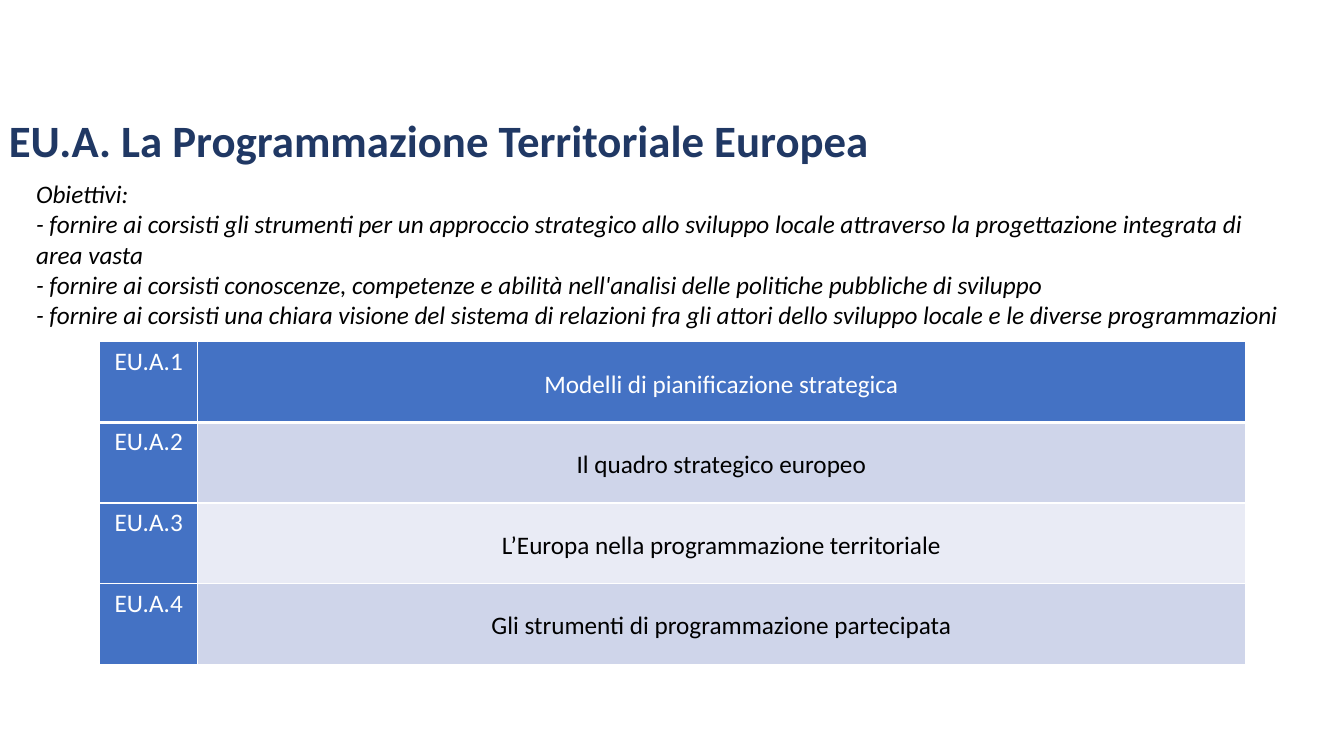
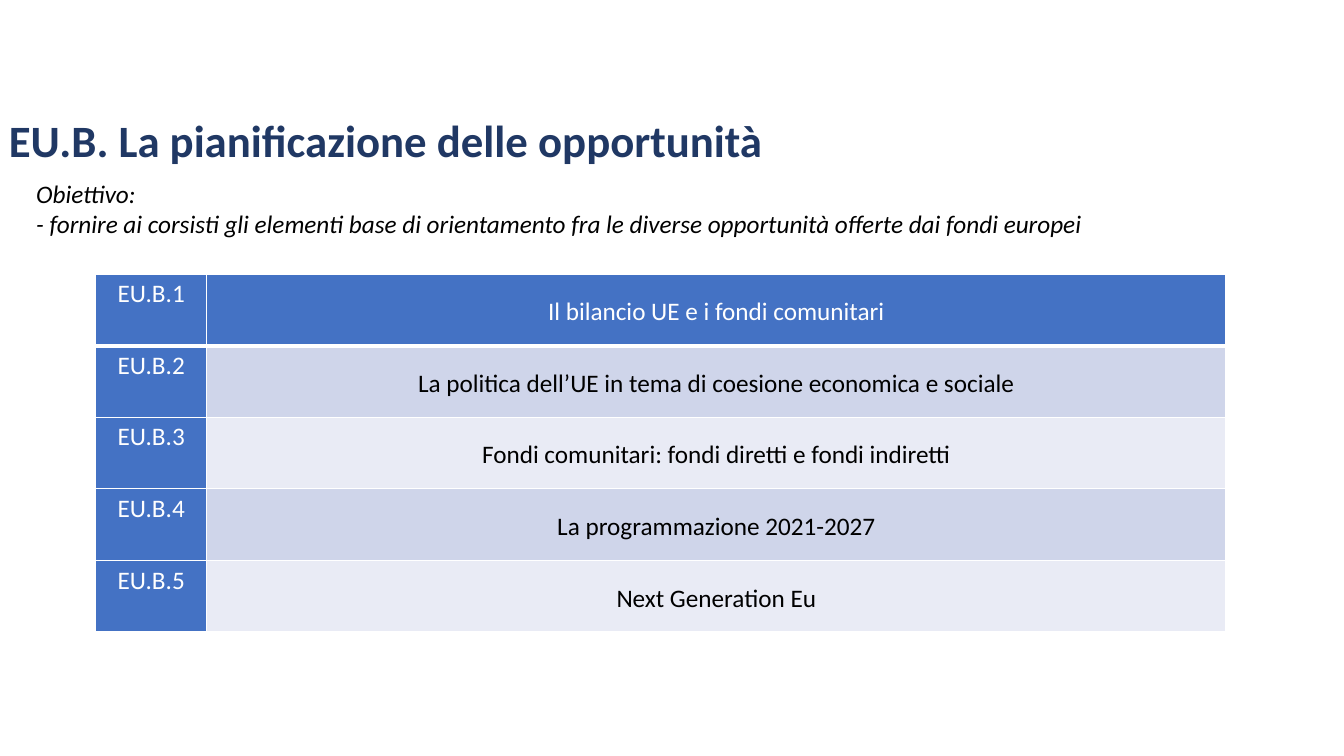
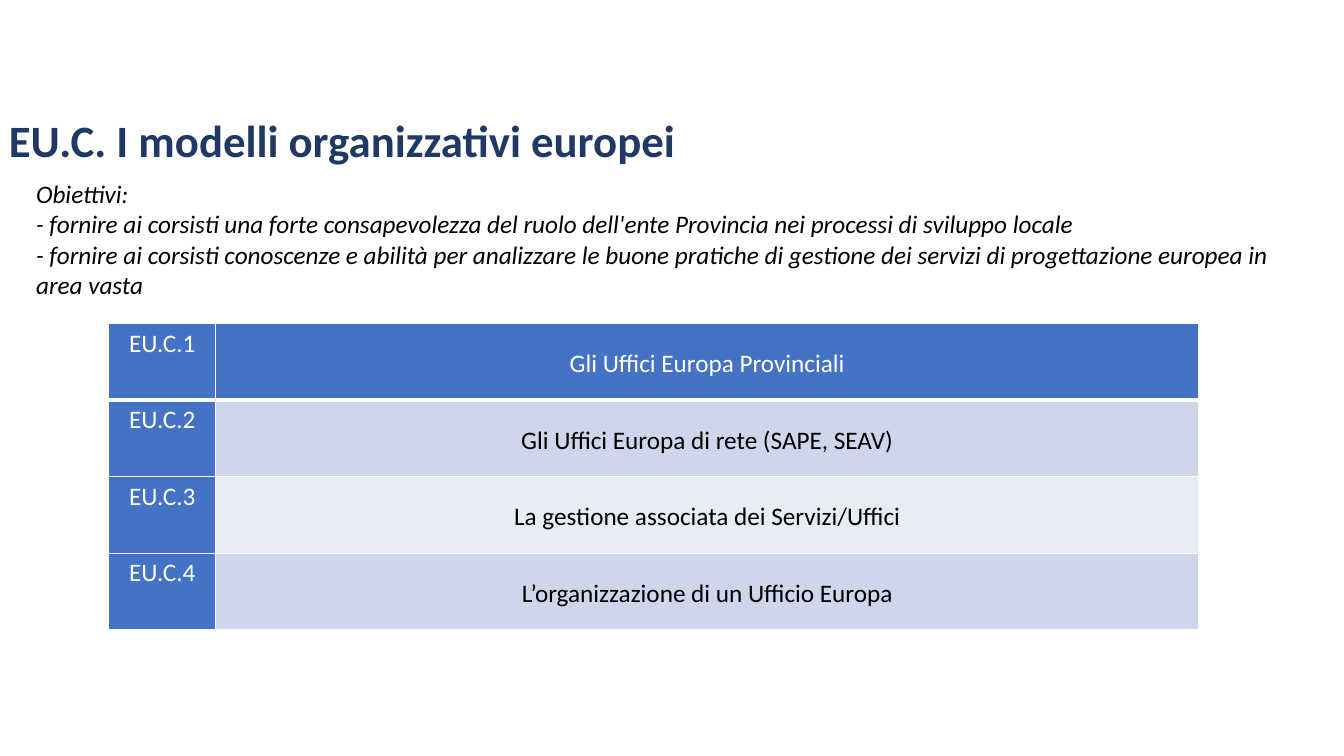
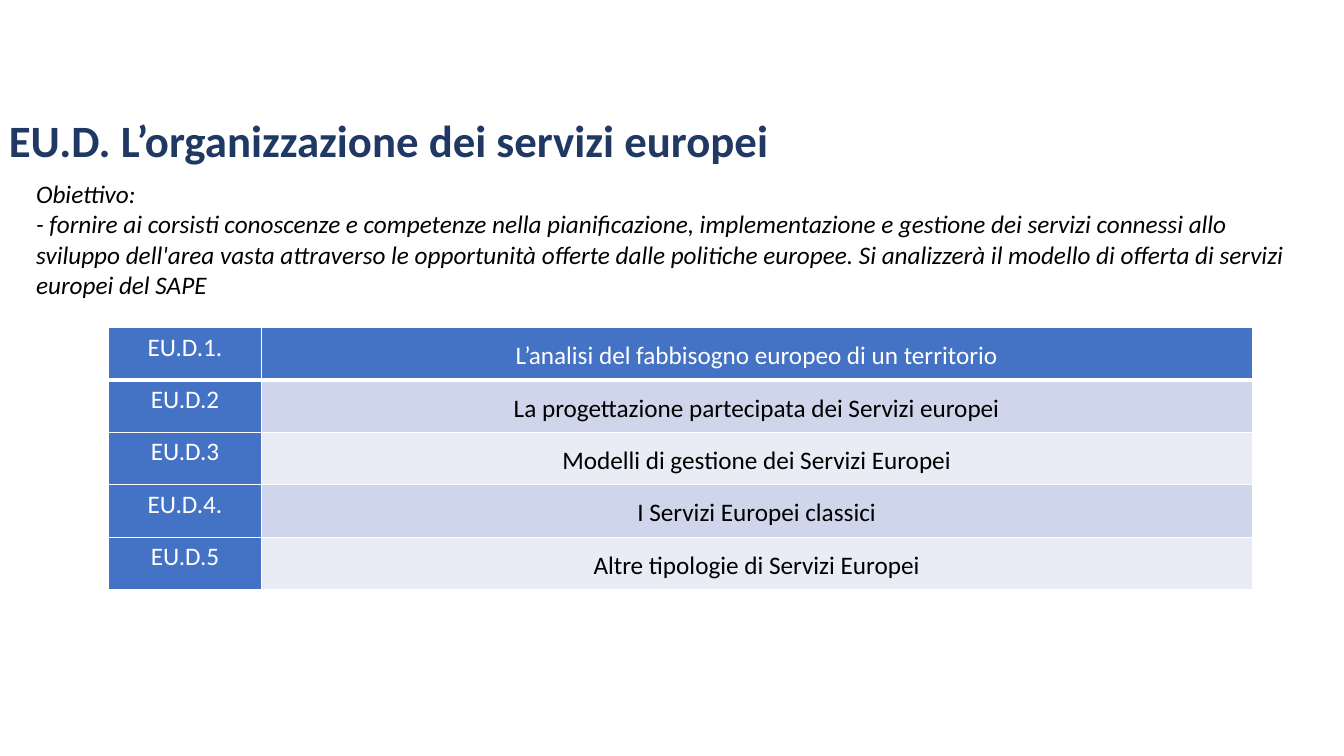
from lxml import etree
from pptx import Presentation
from pptx import util as u
from pptx.dml.color import RGBColor
from pptx.enum import text
from pptx.oxml.ns import qn

PX = 9144  # 100 px to the inch
FONT = "Calibri"
NAVY, BLUE, BLACK, WHITE = "203864", "4472C4", "000000", "FFFFFF"
BANDS = ["E9EBF5", "CFD5EA"]


def rgb(value):
    return RGBColor.from_string(value)


def write(frame, lines, size=18, color=BLACK, bold=False, italic=False,
          align=text.PP_ALIGN.LEFT, spacing=1.0, after=0):
    frame.word_wrap = True
    for i, line in enumerate(lines):
        paragraph = frame.paragraphs[0] if i == 0 else frame.add_paragraph()
        paragraph.alignment = align
        paragraph.line_spacing = spacing
        paragraph.space_after = u.Pt(after)
        run = paragraph.add_run()
        run.text = line
        run.font.name = FONT
        run.font.size = u.Pt(size)
        run.font.bold = bold
        run.font.italic = italic
        run.font.color.rgb = rgb(color)


# Course modules: table is (left, top, code width, topic width, row height)
modules = [
    dict(title="EU.A. La Programmazione Territoriale Europea",
         goals=["Obiettivi:",
                "- fornire ai corsisti gli strumenti per un approccio strategico allo sviluppo locale attraverso la progettazione integrata di area vasta",
                "- fornire ai corsisti conoscenze, competenze e abilità nell'analisi delle politiche pubbliche di sviluppo",
                "- fornire ai corsisti una chiara visione del sistema di relazioni fra gli attori dello sviluppo locale e le diverse programmazioni"],
         goals_size=(1260, 162), table=(99, 339, 97, 1039, 80), after=0,
         units=[("EU.A.1", "Modelli di pianificazione strategica"),
                ("EU.A.2", "Il quadro strategico europeo"),
                ("EU.A.3", "L’Europa nella programmazione territoriale"),
                ("EU.A.4", "Gli strumenti di programmazione partecipata")]),
    dict(title="EU.B. La pianificazione delle opportunità",
         goals=["Obiettivo:",
                "- fornire ai corsisti gli elementi base di orientamento fra le diverse opportunità offerte dai fondi europei"],
         goals_size=(1182, 71), table=(95, 272, 110, 1011, 71), after=0,
         units=[("EU.B.1", "Il bilancio UE e i fondi comunitari"),
                ("EU.B.2", "La politica dell’UE in tema di coesione economica e sociale"),
                ("EU.B.3", "Fondi comunitari: fondi diretti e fondi indiretti"),
                ("EU.B.4", "La programmazione 2021-2027"),
                ("EU.B.5", "Next Generation Eu")]),
    dict(title="EU.C. I modelli organizzativi europei",
         goals=["Obiettivi:",
                "- fornire ai corsisti una forte consapevolezza del ruolo dell'ente Provincia nei processi di sviluppo locale",
                "- fornire ai corsisti conoscenze e abilità per analizzare le buone pratiche di gestione dei servizi di progettazione europea in area vasta"],
         goals_size=(1260, 131), table=(108, 321, 106, 975, 76), after=0,
         units=[("EU.C.1", "Gli Uffici Europa Provinciali"),
                ("EU.C.2", "Gli Uffici Europa di rete (SAPE, SEAV)"),
                ("EU.C.3", "La gestione associata dei Servizi/Uffici"),
                ("EU.C.4", "L’organizzazione di un Ufficio Europa")]),
    dict(title="EU.D. L’organizzazione dei servizi europei",
         goals=["Obiettivo:",
                "- fornire ai corsisti conoscenze e competenze nella pianificazione, implementazione e gestione dei servizi connessi allo sviluppo dell'area vasta attraverso le opportunità offerte dalle politiche europee. Si analizzerà il modello di offerta di servizi europei del SAPE"],
         goals_size=(1260, 131), table=(108, 325, 151, 983, 52), after=10,
         units=[("EU.D.1.", "L’analisi del fabbisogno europeo di un territorio"),
                ("EU.D.2", "La progettazione partecipata dei Servizi europei"),
                ("EU.D.3", "Modelli di gestione dei Servizi Europei"),
                ("EU.D.4.", "I Servizi Europei classici"),
                ("EU.D.5", "Altre tipologie di Servizi Europei")]),
]

deck = Presentation()
deck.slide_width, deck.slide_height = 1333 * PX, 750 * PX

for module in modules:
    slide = deck.slides.add_slide(deck.slide_layouts[6])

    # Objectives
    width, height = module["goals_size"]
    goals = slide.shapes.add_textbox(26 * PX, 172 * PX, width * PX, height * PX).text_frame
    write(goals, module["goals"], italic=True)
    goals.auto_size = text.MSO_AUTO_SIZE.SHAPE_TO_FIT_TEXT

    # Units table
    left, top, code_width, topic_width, row_height = module["table"]
    count = len(module["units"])
    units = slide.shapes.add_table(count, 2, left * PX, top * PX,
                                   (code_width + topic_width) * PX,
                                   count * row_height * PX).table
    units.columns[0].width = code_width * PX
    units.columns[1].width = topic_width * PX
    for r, unit in enumerate(module["units"]):
        units.rows[r].height = row_height * PX
        for c, label in enumerate(unit):
            cell = units.cell(r, c)
            accent = r == 0 or c == 0
            cell.margin_left = cell.margin_right = 7 * PX
            cell.margin_top = cell.margin_bottom = 0
            cell.vertical_anchor = text.MSO_ANCHOR.MIDDLE if c else text.MSO_ANCHOR.TOP
            write(cell.text_frame, [label], color=WHITE if accent else BLACK,
                  align=text.PP_ALIGN.CENTER, spacing=1.15, after=module["after"])

            # White borders, heavier under the first row
            for side in "LRTB":
                heavy = (r, side) in [(0, "B"), (1, "T")]
                border = etree.SubElement(cell._tc.get_or_add_tcPr(), qn("a:ln" + side),
                                          w=str(u.Pt(3 if heavy else 1)))
                paint = etree.SubElement(border, qn("a:solidFill"))
                etree.SubElement(paint, qn("a:srgbClr"), val=WHITE)
            cell.fill.solid()
            cell.fill.fore_color.rgb = rgb(BLUE if accent else BANDS[r % 2])

    # Title
    title = slide.shapes.add_textbox(-1 * PX, 99 * PX, 1150 * PX, 86 * PX).text_frame
    title.vertical_anchor = text.MSO_ANCHOR.MIDDLE
    write(title, [module["title"]], size=32, color=NAVY, bold=True, spacing=0.9)

deck.save("out.pptx")
